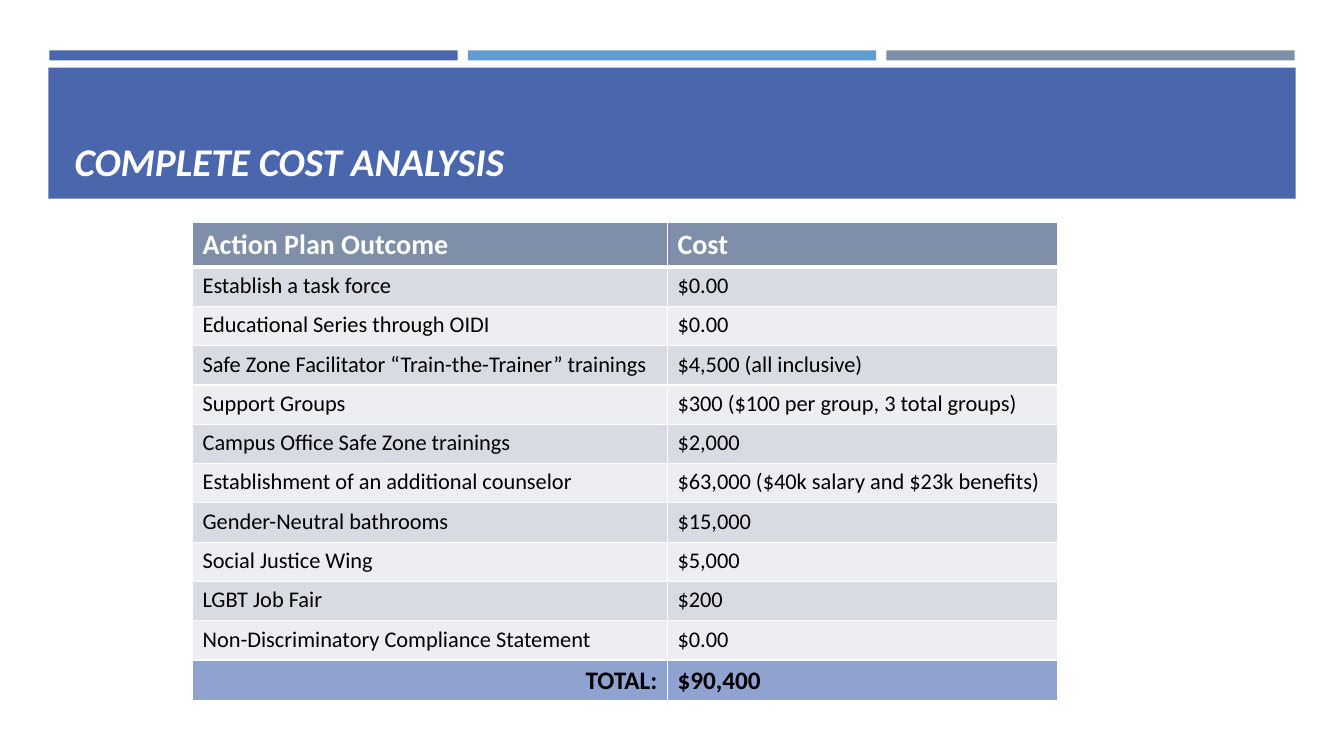
from lxml import etree
from pptx import Presentation
from pptx.dml.color import RGBColor
from pptx.enum.shapes import MSO_SHAPE
from pptx.enum.text import MSO_ANCHOR, MSO_AUTO_SIZE, PP_ALIGN
from pptx.oxml.ns import qn
from pptx.util import Inches, Pt

RECT = MSO_SHAPE.RECTANGLE
BOTTOM = MSO_ANCHOR.BOTTOM
NO_AUTOFIT = MSO_AUTO_SIZE.NONE
LEFT, RIGHT = PP_ALIGN.LEFT, PP_ALIGN.RIGHT

WHITE = RGBColor(0xFF, 0xFF, 0xFF)
BLACK = RGBColor(0x00, 0x00, 0x00)
BLUE = RGBColor(0x4A, 0x66, 0xAC)
SKY = RGBColor(0x62, 0x9D, 0xD1)
SLATE = RGBColor(0x7F, 0x8F, 0xA9)
BAND_DARK = RGBColor(0xD8, 0xDB, 0xE2)
BAND_LIGHT = RGBColor(0xEC, 0xEE, 0xF1)
TOTAL_BLUE = RGBColor(0x90, 0xA2, 0xCF)

COSTS = [
    ("Action Plan Outcome", "Cost"),
    ("Establish a task force", "$0.00"),
    ("Educational Series through OIDI", "$0.00"),
    ("Safe Zone Facilitator “Train-the-Trainer” trainings", "$4,500 (all inclusive)"),
    ("Support Groups", "$300 ($100 per group, 3 total groups)"),
    ("Campus Office Safe Zone trainings", "$2,000"),
    ("Establishment of an additional counselor", "$63,000 ($40k salary and $23k benefits)"),
    ("Gender-Neutral bathrooms", "$15,000"),
    ("Social Justice Wing", "$5,000"),
    ("LGBT Job Fair", "$200"),
    ("Non-Discriminatory Compliance Statement", "$0.00"),
    ("TOTAL:", "$90,400"),
]


class SlideBuilder:
    font = "Calibri"

    def __init__(self, prs):
        self.slide = prs.slides.add_slide(prs.slide_layouts[5])

    def format_runs(self, p, size, color, bold=False, italic=False, align=LEFT):
        p.alignment = align
        for r in p.runs:
            r.font.name = self.font
            r.font.size = Pt(size)
            r.font.bold = bold
            r.font.italic = italic
            r.font.color.rgb = color

    def bar(self, x, y, w, h, color):
        sp = self.slide.shapes.add_shape(RECT, Inches(x), Inches(y), Inches(w), Inches(h))
        sp.shadow.inherit = False
        sp.fill.solid()
        sp.fill.fore_color.rgb = color
        sp.line.fill.background()

    def title(self, text, x, y, w, h):
        """Fill the title placeholder and bring it in front of the bars."""
        sp = self.slide.shapes.title
        sp.left, sp.top, sp.width, sp.height = Inches(x), Inches(y), Inches(w), Inches(h)
        tf = sp.text_frame
        tf.text = text
        tf.word_wrap = True
        tf.auto_size = NO_AUTOFIT
        tf.vertical_anchor = BOTTOM
        self.format_runs(tf.paragraphs[0], 28, WHITE, bold=True, italic=True)
        self.slide.shapes._spTree.append(sp._element)

    def borders(self, cell, top=1, bottom=1):
        """Draw white borders, with widths in points."""
        tc_pr = cell._tc.get_or_add_tcPr()
        for side, width in (("L", 1), ("R", 1), ("T", top), ("B", bottom)):
            ln = etree.SubElement(tc_pr, qn(f"a:ln{side}"), w=str(Pt(width)))
            fill = etree.SubElement(ln, qn("a:solidFill"))
            etree.SubElement(fill, qn("a:srgbClr"), val=str(WHITE))

    def cost_table(self, rows, x, y, col_widths, row_height):
        last = len(rows) - 1
        table = self.slide.shapes.add_table(
            len(rows), len(col_widths), Inches(x), Inches(y),
            Inches(sum(col_widths)), Inches(row_height * len(rows))).table
        for col, width in zip(table.columns, col_widths):
            col.width = Inches(width)
        for i, row in enumerate(rows):
            table.rows[i].height = Inches(row_height)
            if i == 0:
                fill, size, color = SLATE, 20, WHITE
            elif i == last:
                fill, size, color = TOTAL_BLUE, 18, BLACK
            else:
                fill, size, color = (BAND_DARK if i % 2 else BAND_LIGHT), 16, BLACK
            for j, text in enumerate(row):
                cell = table.cell(i, j)
                self.borders(cell, top=3 if i == 1 else 1, bottom=3 if i == 0 else 1)
                cell.fill.solid()
                cell.fill.fore_color.rgb = fill
                p = cell.text_frame.paragraphs[0]
                p.text = text
                self.format_runs(p, size, color, bold=i in (0, last),
                                 align=RIGHT if i == last and j == 0 else LEFT)


def main():
    prs = Presentation()
    prs.slide_width, prs.slide_height = Inches(13.33), Inches(7.5)
    s = SlideBuilder(prs)
    for i, color in enumerate((BLUE, SKY, SLATE)):
        s.bar(0.49 + 4.15 * i, 0.5, 4.05, 0.1, color)
    s.bar(0.48, 0.67, 12.37, 1.3, BLUE)
    s.title("COMPLETE COST ANALYSIS", 0.64, 0.77, 12.06, 1.11)
    s.cost_table(COSTS, 1.91, 2.21, (4.71, 3.87), 0.39)
    prs.save("out.pptx")


if __name__ == "__main__":
    main()
